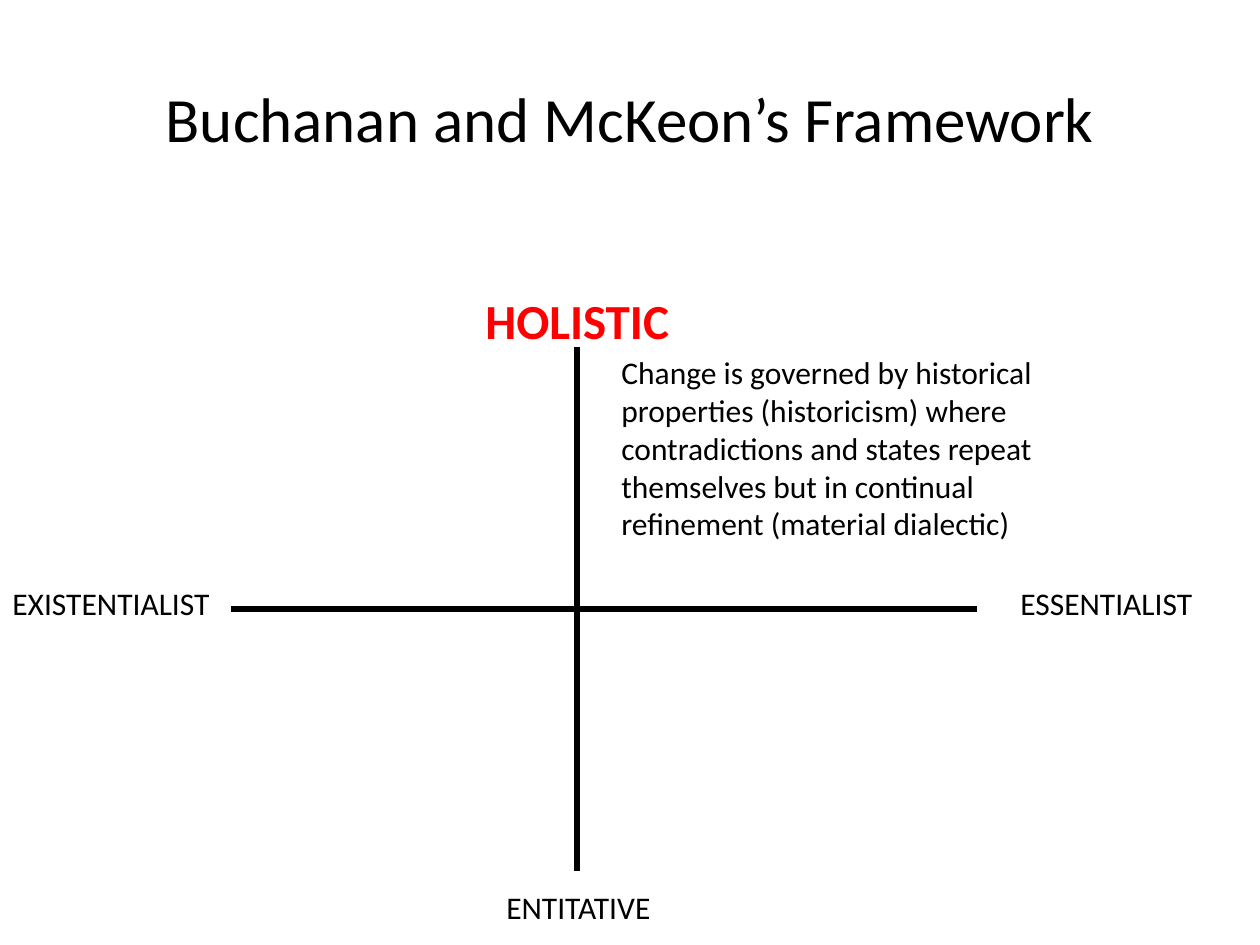
from dataclasses import dataclass

from lxml.etree import SubElement
from pptx import Presentation
from pptx.dml.color import RGBColor
from pptx.enum.shapes import MSO_CONNECTOR as Connector
from pptx.enum.text import MSO_ANCHOR as Anchor, MSO_AUTO_SIZE as AutoSize, PP_ALIGN as Align
from pptx.oxml.ns import qn
from pptx.util import Emu, Pt

PIXEL = 914400 // 126
BLACK = RGBColor(0x00, 0x00, 0x00)
RED = RGBColor(0xFF, 0x00, 0x00)
FONT = "Calibri"


@dataclass
class Axis:
    start: tuple[int, int]
    end: tuple[int, int]


@dataclass
class Label:
    text: str
    left: int
    top: int
    width: int
    height: int = 50
    size: int = 18
    color: RGBColor = BLACK
    bold: bool = False


AXES = [
    Axis((577, 347), (577, 871)),
    Axis((231, 609), (977, 609)),
]

LABELS = [
    Label("ENTITATIVE", 494, 882, 179),
    Label("HOLISTIC", 473, 284, 231, 72, size=28, color=RED, bold=True),
    Label("ESSENTIALIST", 1008, 578, 199),
    Label("EXISTENTIALIST", 0, 578, 252),
    Label(
        "Change is governed by historical properties (historicism) where "
        "contradictions and states repeat themselves but in continual "
        "refinement (material dialectic)",
        609, 347, 525, 204,
    ),
]


def px(value: int) -> Emu:
    return Emu(value * PIXEL)


def write_text(frame, text: str, *, size: int = 18, color: RGBColor = BLACK,
               bold: bool = False, align: Align = Align.LEFT) -> None:
    frame.word_wrap = True
    paragraph = frame.paragraphs[0]
    paragraph.alignment = align
    run = paragraph.add_run()
    run.text = text
    run.font.name = FONT
    run.font.size = Pt(size)
    run.font.bold = bold
    run.font.color.rgb = color


def draw_axis(slide, axis: Axis) -> None:
    line = slide.shapes.add_connector(
        Connector.STRAIGHT, *map(px, axis.start + axis.end))
    line.line.color.rgb = BLACK
    line.line.width = Pt(3)
    SubElement(line._element.spPr, qn("a:effectLst"))


def draw_label(slide, label: Label) -> None:
    box = slide.shapes.add_textbox(
        px(label.left), px(label.top), px(label.width), px(label.height))
    write_text(box.text_frame, label.text, size=label.size,
               color=label.color, bold=label.bold)
    box.text_frame.auto_size = AutoSize.SHAPE_TO_FIT_TEXT


def main() -> None:
    presentation = Presentation()
    presentation.slide_width = px(1260)
    presentation.slide_height = px(945)
    slide = presentation.slides.add_slide(presentation.slide_layouts[5])

    # Title
    title = slide.shapes.title
    title.left, title.top, title.width, title.height = map(px, (0, 38, 1260, 158))
    title.text_frame.vertical_anchor = Anchor.MIDDLE
    write_text(title.text_frame, "Buchanan and McKeon’s Framework",
               size=36, align=Align.CENTER)

    # Crossed axes
    for axis in AXES:
        draw_axis(slide, axis)

    # Axis ends and quadrant description
    for label in LABELS:
        draw_label(slide, label)

    presentation.save("out.pptx")


if __name__ == "__main__":
    main()
